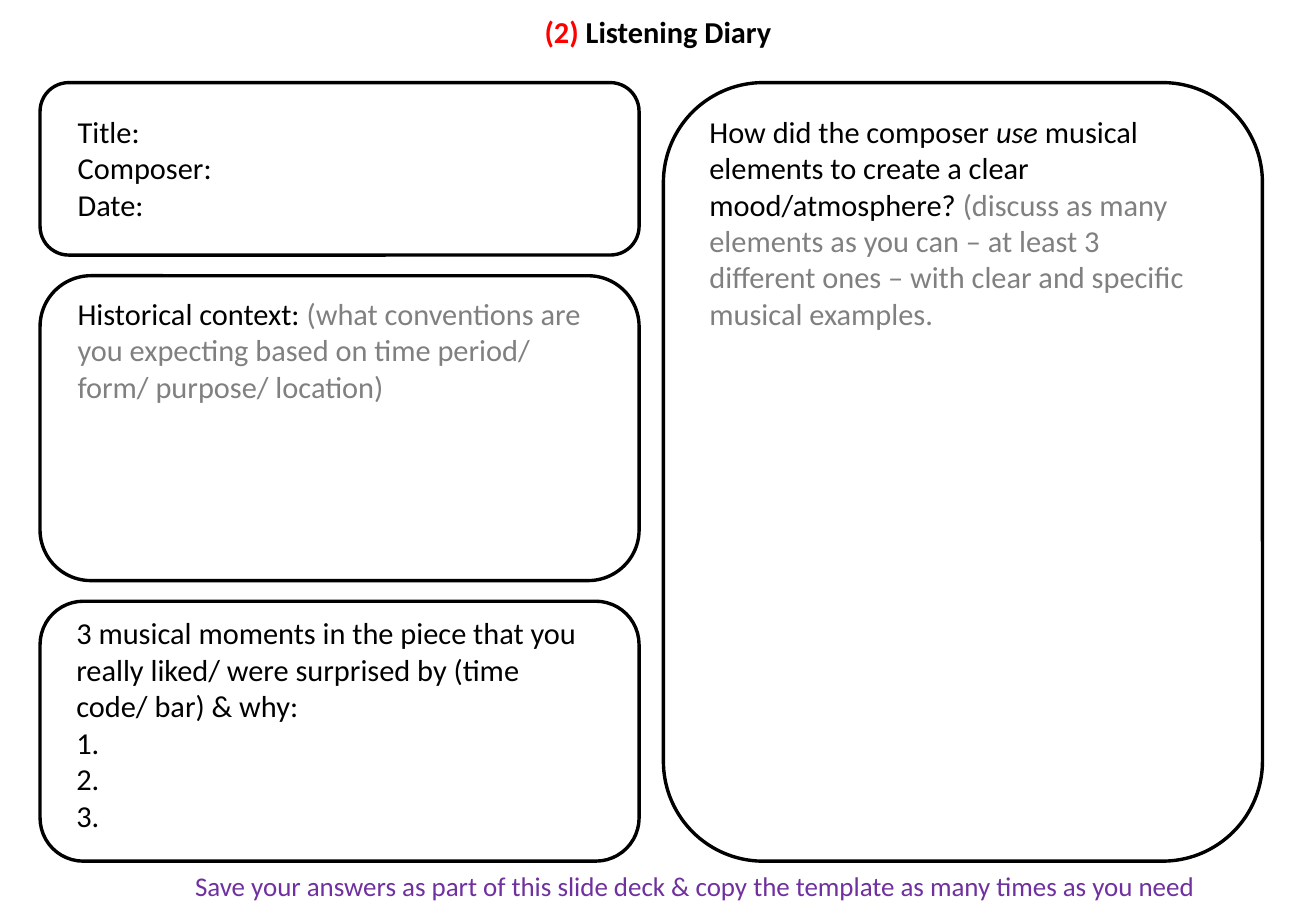
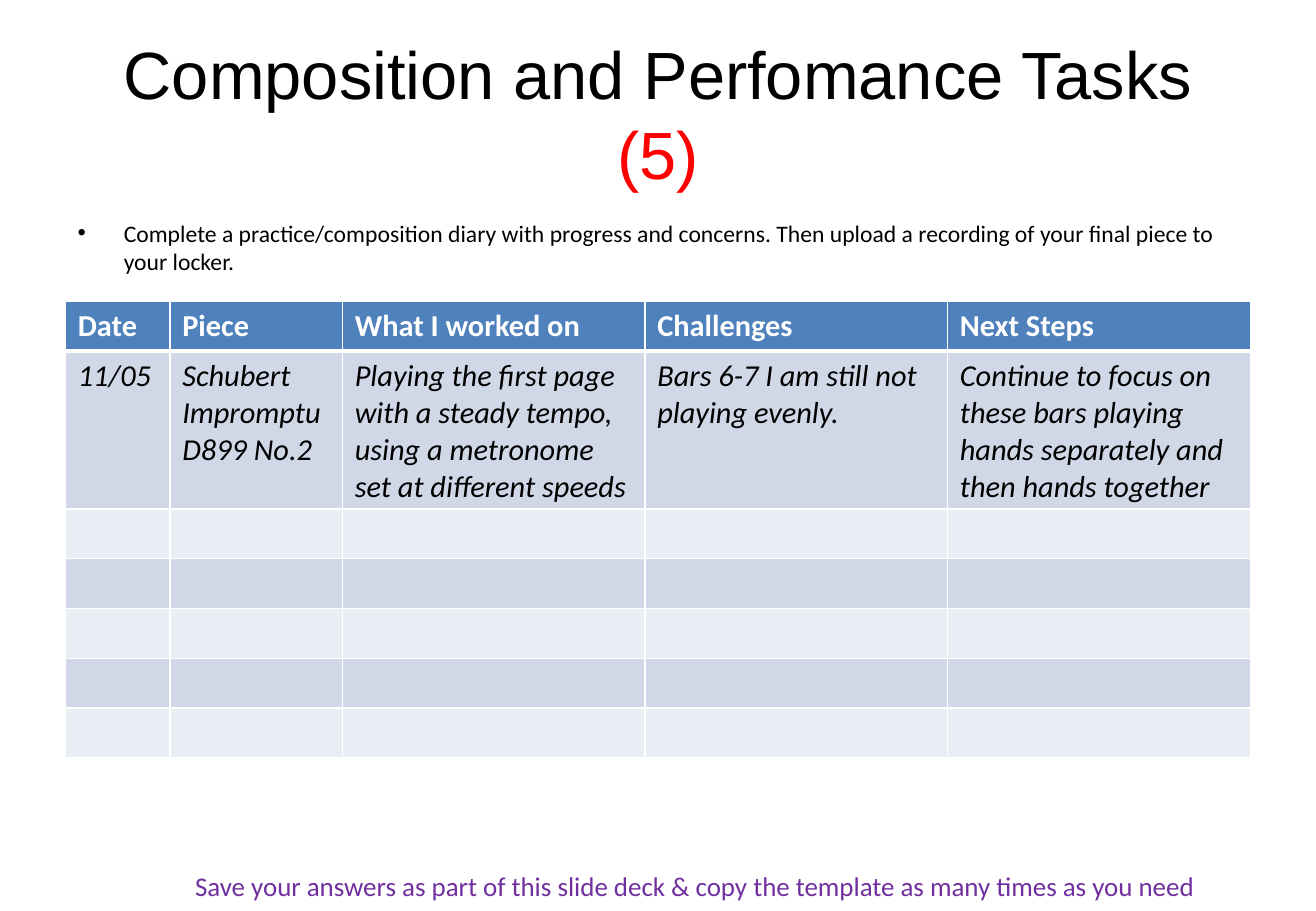
from lxml import etree
from pptx import Presentation
from pptx.dml.color import RGBColor
from pptx.enum.shapes import MSO_SHAPE
from pptx.enum.text import MSO_ANCHOR, PP_ALIGN
from pptx.oxml.ns import qn
from pptx.util import Inches, Pt

ROUNDED = MSO_SHAPE.ROUNDED_RECTANGLE
CENTER, LEFT = PP_ALIGN.CENTER, PP_ALIGN.LEFT
MIDDLE, TOP = MSO_ANCHOR.MIDDLE, MSO_ANCHOR.TOP

BLACK, WHITE, RED, GREY, PURPLE = "000000", "FFFFFF", "FF0000", "808080", "7030A0"
HEADER_FILL, BAND_FILLS = "4F81BD", ("D0D8E8", "E9EDF4")
FONT, TITLE_FONT = "Calibri", "Arial"
BODY_SIZE = 18
MARGIN, CONTENT_WIDTH = 0.54, 9.75
FOOTER = "Save your answers as part of this slide deck & copy the template as many times as you need "


def color(hex_value):
    return RGBColor.from_string(hex_value)


def add_run(paragraph, text, hex_value=BLACK, size=BODY_SIZE, name=FONT, bold=False, italic=False):
    run = paragraph.add_run()
    run.text = text
    font = run.font
    font.name, font.size, font.bold, font.italic = name, Pt(size), bold, italic
    font.color.rgb = color(hex_value)


def add_text(slide, box, paragraphs, align=LEFT, anchor=TOP, **style):
    """Each paragraph is a list of (text, overrides) runs."""
    frame = slide.shapes.add_textbox(*map(Inches, box)).text_frame
    frame.word_wrap = True
    frame.vertical_anchor = anchor
    for index, runs in enumerate(paragraphs):
        paragraph = frame.paragraphs[0] if index == 0 else frame.add_paragraph()
        paragraph.alignment = align
        for text, overrides in runs:
            add_run(paragraph, text, **{**style, **overrides})
    return frame


def add_bullet(paragraph, tag, **attributes):
    properties = paragraph._p.get_or_add_pPr()
    properties.set("marL", str(Inches(0.38)))
    properties.set("indent", str(-Inches(0.38)))
    if tag == "a:buChar":
        etree.SubElement(properties, qn("a:buFont")).set("typeface", TITLE_FONT)
    etree.SubElement(properties, qn(tag), attributes)


def add_title(slide, box, runs, **style):
    add_text(slide, box, [runs], CENTER, MIDDLE, **style)


def add_footer(slide):
    add_text(slide, (0.33, 7.11, 10.83, 0.37), [[(FOOTER, {})]], CENTER, hex_value=PURPLE, size=16)


def add_panel(slide, box, inset, paragraphs):
    """Rounded outline with text inset by (left, top, right)."""
    left, top, width, height = box
    shape = slide.shapes.add_shape(ROUNDED, *map(Inches, box))
    shape.shadow.inherit = False
    shape.fill.background()
    shape.line.color.rgb = color(BLACK)
    shape.line.width = Pt(2)
    inset_left, inset_top, inset_right = inset
    text_box = (left + inset_left, top + inset_top,
                width - inset_left - inset_right, height - 2 * inset_top)
    return add_text(slide, text_box, paragraphs)


def set_border(cell, side, width):
    line = etree.Element(qn(f"a:ln{side}"), w=str(Pt(width)))
    fill = etree.SubElement(line, qn("a:solidFill"))
    etree.SubElement(fill, qn("a:srgbClr"), val=WHITE)
    return line


def style_cell(cell, fill, top_width, bottom_width):
    cell.fill.solid()
    cell.fill.fore_color.rgb = color(fill)
    widths = {"L": 1, "R": 1, "T": top_width, "B": bottom_width}
    properties = cell._tc.get_or_add_tcPr()
    for index, (side, width) in enumerate(widths.items()):
        properties.insert(index, set_border(cell, side, width))


def add_diary_table(slide, left, top, columns, rows, row_heights):
    table = slide.shapes.add_table(
        len(row_heights), len(columns), Inches(left), Inches(top),
        Inches(sum(columns)), Inches(sum(row_heights))).table
    for column, width in zip(table.columns, columns):
        column.width = Inches(width)
    for row_index, height in enumerate(row_heights):
        table.rows[row_index].height = Inches(height)
        is_header = row_index == 0
        fill = HEADER_FILL if is_header else BAND_FILLS[(row_index - 1) % 2]
        for column_index in range(len(columns)):
            cell = table.cell(row_index, column_index)
            style_cell(cell, fill, 3 if row_index == 1 else 1, 3 if is_header else 1)
            if row_index < len(rows):
                add_run(cell.text_frame.paragraphs[0], rows[row_index][column_index],
                        WHITE if is_header else BLACK, bold=is_header, italic=not is_header)


def build_listening_diary(slide):
    add_title(slide, (MARGIN, 0.03, CONTENT_WIDTH, 0.46),
              [("(2) ", {"hex_value": RED}), ("Listening Diary", {})], bold=True)
    add_footer(slide)

    # Left column: three panels with equal gaps
    left, top, width, gap = 0.33, 0.68, 4.93, 0.17
    piece = [[("Title:", {})], [("Composer:", {})], [("Date:", {})]]
    context = [[
        ("Historical context: ", {}),
        ("(what conventions are you expecting based on time period/ form/ purpose/ location)",
         {"hex_value": GREY})]]
    moments = [[("3 musical moments in the piece that you really liked/ were surprised by "
                 "(time code/ bar) & why:", {})]] + [[(" ", {})]] * 3
    panels = [(1.42, (0.21, 0.2, 0.2), piece),
              (2.51, (0.21, 0.11, 0.16), context),
              (2.14, (0.2, 0.06, 0.4), moments)]
    panel_top = top
    for height, inset, paragraphs in panels:
        frame = add_panel(slide, (left, panel_top, width, height), inset, paragraphs)
        panel_top += height + gap
    for paragraph in frame.paragraphs[1:]:
        add_bullet(paragraph, "a:buAutoNum", type="arabicPeriod")

    # Right column: one tall panel
    add_panel(slide, (5.46, top, width, panel_top - gap - top), (0.28, 0.2, 0.41), [[
        ("How did the composer ", {}),
        ("use", {"italic": True}),
        (" musical elements to create a clear mood/atmosphere? ", {}),
        ("(discuss as many elements as you can – at least 3 different ones – "
         "with clear and specific musical examples.", {"hex_value": GREY})]])


def build_task_diary(slide):
    add_title(slide, (MARGIN, 0.3, CONTENT_WIDTH, 1.25),
              [("Composition and Perfomance Tasks ", {}), ("(5)", {"hex_value": RED})],
              size=39.6, name=TITLE_FONT)

    # Instruction
    frame = add_text(slide, (MARGIN, 1.75, CONTENT_WIDTH, 0.74), [[
        ("Complete a practice/composition diary with progress and concerns. "
         "Then upload a recording of your final piece to your locker.", {})]], size=14)
    paragraph = frame.paragraphs[0]
    paragraph.space_before = Pt(2.8)
    add_bullet(paragraph, "a:buChar", char="•")
    add_footer(slide)

    # Diary
    rows = [
        ("Date", "Piece", "What I worked on", "Challenges", "Next Steps"),
        ("11/05", "Schubert Impromptu D899 No.2",
         "Playing the first page with a steady tempo, using a metronome set at different speeds",
         "Bars 6-7 I am still not playing evenly.",
         "Continue to focus on these bars playing hands separately and then hands together")]
    add_diary_table(slide, MARGIN, 2.48, [0.86, 1.42] + [2.49] * 3, rows,
                    [0.41, 1.29] + [0.41] * 5)


def main():
    presentation = Presentation()
    presentation.slide_width = Inches(10.83)
    presentation.slide_height = Inches(7.5)
    blank = presentation.slide_layouts[6]
    for build in (build_listening_diary, build_task_diary):
        build(presentation.slides.add_slide(blank))
    presentation.save("out.pptx")


if __name__ == "__main__":
    main()
